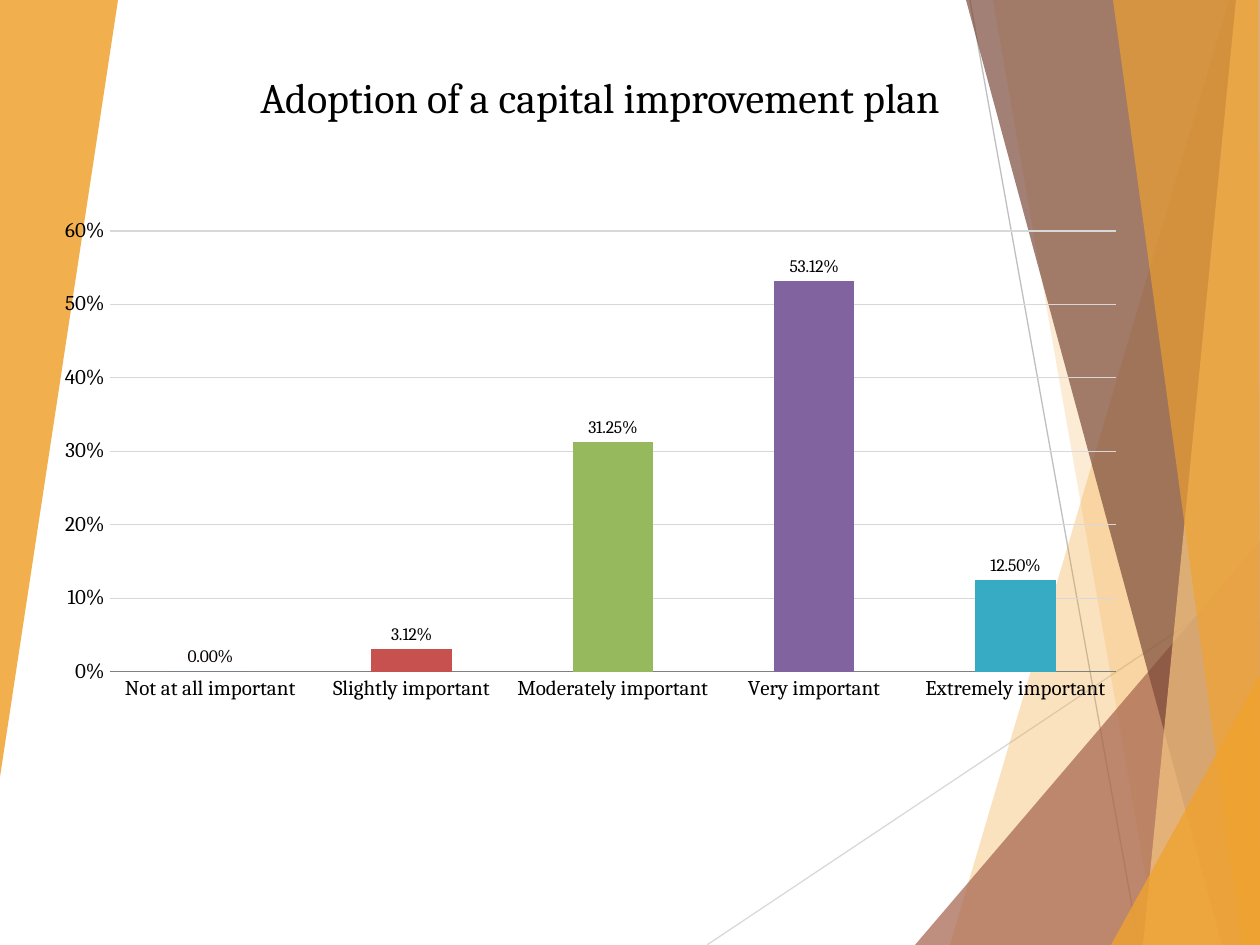
from lxml import etree
from pptx import Presentation
from pptx import util as u
from pptx.chart.data import CategoryChartData
from pptx.dml.color import RGBColor
from pptx.enum import chart as ch, shapes, text
from pptx.oxml import parse_xml
from pptx.oxml.ns import nsdecls, qn

PX = 914400 // 126
WIDTH, HEIGHT = 1260, 945
FONT = "Cambria"
COLOURS = {
    "amber": "F0A22E", "sand": "F6C782", "rust": "A5644E", "brown": "7C4B3B",
    "black": "000000", "axis": "808080", "grid": "D8D8D8",
    "pale line": "D9D9D9", "grey line": "BFBFBF",
    "blue": "4980BA", "red": "C6514E", "green": "96B95D",
    "purple": "81649F", "teal": "38ABC4",
}

# Decoration: colour, opacity in percent, corner points in px
FACETS = [
    ("amber", 30, [(1229, 0), (950, HEIGHT), (WIDTH, HEIGHT), (WIDTH, 0)]),
    ("amber", 20, [(993, 0), (1158, HEIGHT), (WIDTH, HEIGHT), (WIDTH, 0)]),
    ("rust", 72, [(915, HEIGHT), (WIDTH, 541), (WIDTH, HEIGHT)]),
    ("brown", 70, [(966, 0), (1222, HEIGHT), (WIDTH, HEIGHT), (WIDTH, 0)]),
    ("sand", 70, [(1236, 0), (1143, HEIGHT), (WIDTH, HEIGHT), (WIDTH, 0)]),
    ("amber", 65, [(1113, 0), (1242, HEIGHT), (WIDTH, HEIGHT), (1258, 0)]),
    ("amber", 80, [(1111, HEIGHT), (WIDTH, 675), (WIDTH, HEIGHT)]),
    ("amber", 85, [(0, 0), (118, 0), (0, 777)]),
]

# Chart: category, share, bar colour
ANSWERS = [
    ("Not at all important", 0, "blue"),
    ("Slightly important", 0.0312, "red"),
    ("Moderately important", 0.3125, "green"),
    ("Very important", 0.5312, "purple"),
    ("Extremely important", 0.125, "teal"),
]


def px(length):
    return u.Emu(length * PX)


def rgb(name):
    return RGBColor.from_string(COLOURS[name])


def format_font(font, size, colour="black"):
    font.name, font.size, font.bold = FONT, u.Pt(size), False
    font.color.rgb = rgb(colour)


def write_text(frame, words, size, colour="black", align=text.PP_ALIGN.CENTER,
               anchor=text.MSO_ANCHOR.MIDDLE):
    frame.word_wrap = True
    frame.vertical_anchor = anchor
    para = frame.paragraphs[0]
    para.alignment = align
    span = para.add_run()
    span.text = words
    format_font(span.font, size, colour)


class SlideBuilder:
    def __init__(self, deck):
        self.page = deck.slides.add_slide(deck.slide_layouts[5])

    def title(self, words, left, top, width, height, size):
        box = self.page.shapes.title
        box.left, box.top, box.width, box.height = map(px, (left, top, width, height))
        write_text(box.text_frame, words, size)

    def line(self, start, end, colour):
        line = self.page.shapes.add_connector(
            shapes.MSO_CONNECTOR.STRAIGHT, *map(px, start + end))
        line.line.color.rgb = rgb(colour)
        line.line.width = u.Pt(0.75)
        etree.SubElement(line._element.spPr, qn("a:effectLst"))

    def facet(self, colour, opacity, points):
        outline = self.page.shapes.build_freeform(*points[0], scale=PX)
        outline.add_line_segments(points[1:], close=True)
        facet = outline.convert_to_shape()
        facet.shadow.inherit = False
        facet.line.fill.background()
        facet.fill.solid()
        facet.fill.fore_color.rgb = rgb(colour)
        tint = facet._element.spPr.find(".//" + qn("a:srgbClr"))
        etree.SubElement(tint, qn("a:alpha"), val=str(opacity * 1000))

    def column_chart(self, answers, left, top, width, height):
        data = CategoryChartData()
        data.categories = [answer[0] for answer in answers]
        data.add_series("Series 1", [answer[1] for answer in answers])
        chart = self.page.shapes.add_chart(
            ch.XL_CHART_TYPE.COLUMN_CLUSTERED,
            *map(px, (left, top, width, height)), data).chart
        chart.has_legend = chart.has_title = False
        format_font(chart.font, 18)

        # Bars and their labels
        plot = chart.plots[0]
        plot.gap_width, plot.vary_by_categories = 150, False
        for index, (_, _, colour) in enumerate(answers):
            fill = plot.series[0].points[index].format.fill
            fill.solid()
            fill.fore_color.rgb = rgb(colour)
        plot.has_data_labels = True
        labels = plot.data_labels
        labels.show_value = True
        labels.number_format, labels.number_format_is_linked = "0.00%", False
        labels.position = ch.XL_LABEL_POSITION.OUTSIDE_END
        format_font(labels.font, 10)

        # Axes
        for axis in (chart.category_axis, chart.value_axis):
            axis.major_tick_mark = axis.minor_tick_mark = ch.XL_TICK_MARK.NONE
            format_font(axis.tick_labels.font, 12)
        base = chart.category_axis.format.line
        base.color.rgb, base.width = rgb("axis"), u.Pt(0.75)
        scale = chart.value_axis
        scale.minimum_scale, scale.maximum_scale, scale.major_unit = 0, 0.6, 0.1
        scale.tick_labels.number_format = "0%"
        scale.tick_labels.number_format_is_linked = False
        scale.format.line.fill.background()
        grid = scale.major_gridlines.format.line
        grid.color.rgb, grid.width = rgb("grid"), u.Pt(0.75)
        self.place_plot(chart, x=0.06, y=0.04, w=0.92, h=0.84)

    def place_plot(self, chart, **shares):
        area = chart._chartSpace.find(".//" + qn("c:plotArea"))
        for layout in area.findall(qn("c:layout")):
            area.remove(layout)
        modes = '<c:xMode val="edge"/><c:yMode val="edge"/>'
        sizes = "".join(f'<c:{key} val="{share}"/>' for key, share in shares.items())
        area.insert(0, parse_xml(
            f'<c:layout {nsdecls("c")}><c:manualLayout><c:layoutTarget val="inner"/>'
            f"{modes}{sizes}</c:manualLayout></c:layout>"))


def main():
    deck = Presentation()
    deck.slide_width, deck.slide_height = u.Inches(10), u.Inches(7.5)
    slide = SlideBuilder(deck)

    # Background decoration
    slide.line((707, HEIGHT), (WIDTH, 576), "pale line")
    slide.line((970, 0), (1139, HEIGHT), "grey line")
    for facet in FACETS:
        slide.facet(*facet)

    # Content
    slide.title("Adoption of a capital improvement plan", 53, 9, 1094, 175, size=24)
    slide.column_chart(ANSWERS, 44, 210, 1094, 525)
    deck.save("out.pptx")


if __name__ == "__main__":
    main()
